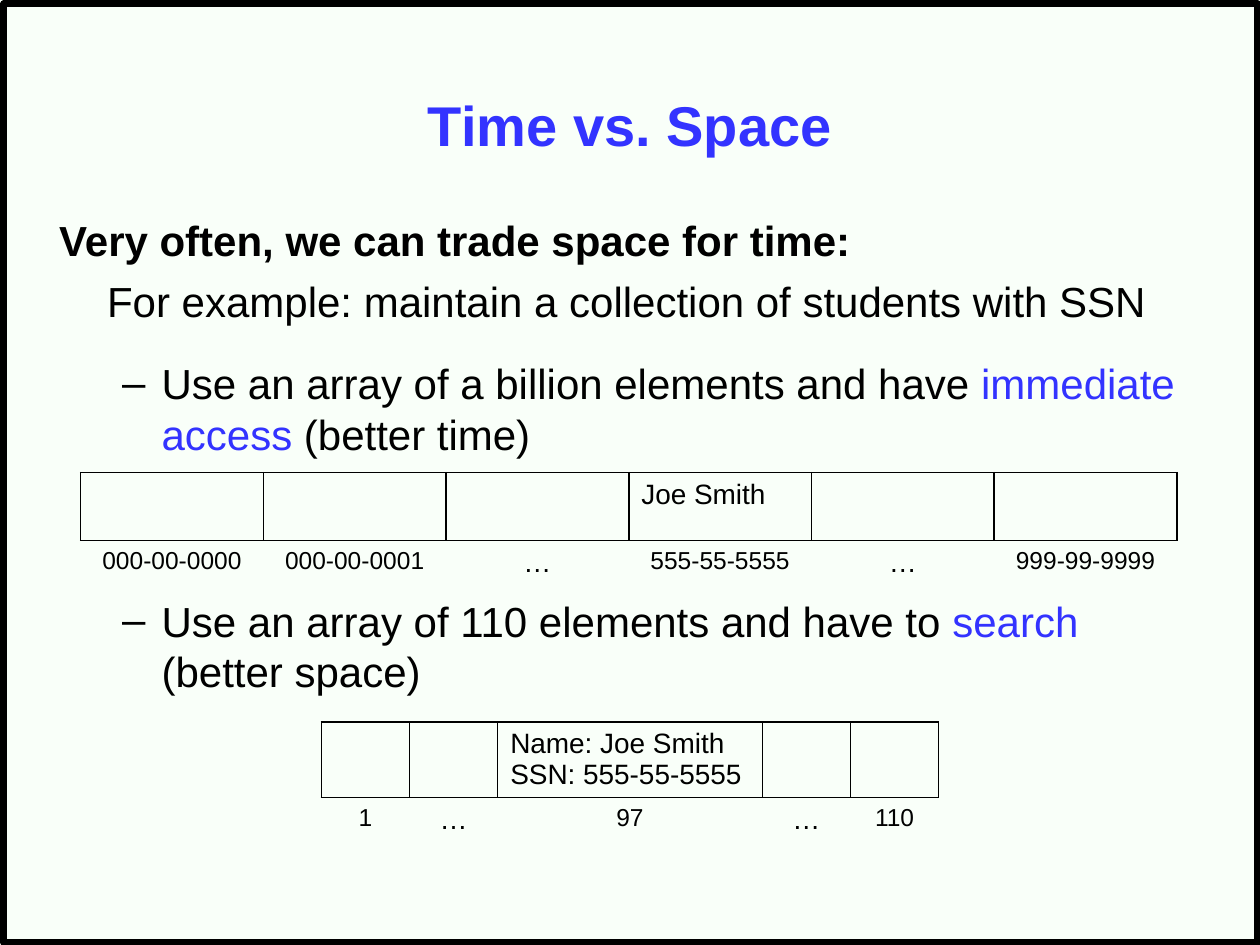
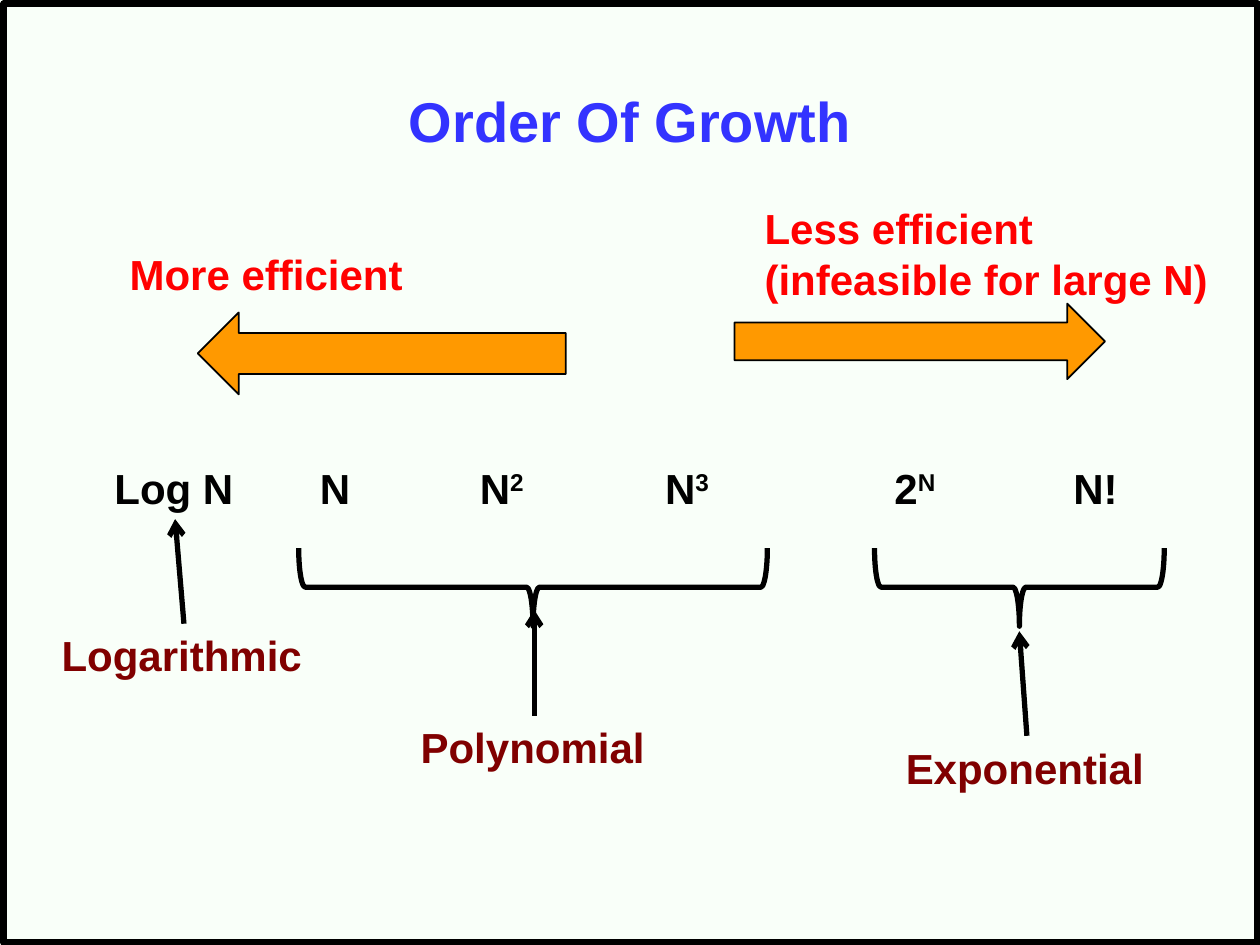
"""Build two slides on the time and space trade-off and on orders of growth."""
import pptx
import pptx.dml.color
import pptx.enum.shapes
import pptx.enum.text
import pptx.oxml
import pptx.oxml.ns
import pptx.util

Inches = pptx.util.Inches
Pt = pptx.util.Pt
qn = pptx.oxml.ns.qn
SHAPE = pptx.enum.shapes.MSO_SHAPE
ALIGN = pptx.enum.text.PP_ALIGN
AUTO_SIZE = pptx.enum.text.MSO_AUTO_SIZE
NAMESPACE = pptx.oxml.ns.nsdecls("a")

PAPER, BLACK, BLUE = "F9FFF9", "000000", "3333FF"
MAROON, RED, ORANGE = "800000", "FF0000", "FF9900"


def tint(color_format, color):
    """Set a colour from a hex string."""
    color_format.rgb = pptx.dml.color.RGBColor.from_string(color)


def write(paragraph, pieces, size, bold=False):
    """Add (text, colour) pieces to a paragraph as Arial runs."""
    font_values = {"name": "Arial", "size": Pt(size), "bold": bold}
    for text, color in pieces:
        run = paragraph.add_run()
        run.text = text
        for attribute, value in font_values.items():
            setattr(run.font, attribute, value)
        tint(run.font.color, color)


deck = pptx.Presentation()
deck.slide_width, deck.slide_height = Inches(10), Inches(7.5)
master = deck.slide_master
master.background.fill.solid()
tint(master.background.fill.fore_color, PAPER)

trade_off = deck.slides.add_slide(deck.slide_layouts[1])
growth = deck.slides.add_slide(deck.slide_layouts[5])

frame = trade_off.shapes.add_shape(
    SHAPE.RECTANGLE, Inches(0.03), Inches(0.03), Inches(9.95), Inches(7.45))
frame.shadow.inherit = False
frame.fill.background()
frame.line.width = Pt(3.75)
tint(frame.line.color, BLACK)
frame.element.nvSpPr.cNvPr.set("id", "20")
master.element.cSld.spTree.append(frame.element)

for slide, heading, top, height in (
        (trade_off, "Time vs. Space", 0.36, 1.25),
        (growth, "Order Of Growth", 0.53, 0.84)):
    title = slide.shapes.title
    title.left, title.top = Inches(0.75), Inches(top)
    title.width, title.height = Inches(8.5), Inches(height)
    title.text_frame.auto_size = AUTO_SIZE.NONE
    write(title.text_frame.paragraphs[0], [(heading, BLUE)], 32, True)

argument = trade_off.placeholders[1]
argument.left, argument.top = Inches(0.37), Inches(1.65)
argument.width, argument.height = Inches(9.32), Inches(5.38)
argument.text_frame.auto_size = AUTO_SIZE.NONE
statements = [
    (0, 0, 0, True, [("Very often, we can trade space for time:", BLACK)]),
    (0, 0.38, 6, False,
     [("For example: maintain a collection of students with SSN", BLACK)]),
    (1, None, 18.5, False,
     [("Use an array of a billion elements and have ", BLACK),
      ("immediate access", BLUE), (" (better time)", BLACK)]),
    (1, None, 78, False,
     [("Use an array of 110 elements and have to ", BLACK),
      ("search", BLUE), (" (better space)", BLACK)]),
]
for number, (level, indent, gap, bold, pieces) in enumerate(statements):
    body = argument.text_frame
    statement = body.add_paragraph() if number else body.paragraphs[0]
    statement.level = level
    statement.space_before = Pt(gap)
    write(statement, pieces, 24, bold)
    if indent is not None:
        properties = statement.font and argument.element.findall(".//" + qn("a:pPr"))[-1]
        properties.set("marL", str(Inches(indent)))
        properties.set("indent", "0")
        properties.append(pptx.oxml.parse_xml(f"<a:buNone {NAMESPACE}/>"))

arrays = [
    (0.64, 3.75, 0.54, [1.45] * 6,
     ["", "", "", "Joe Smith", "", ""],
     ["000-00-0000", "000-00-0001", "…", "555-55-5555", "…", "999-99-9999"]),
    (2.55, 5.73, 0.6, [0.7, 0.7, 2.1, 0.7, 0.7],
     ["", "", "Name: Joe Smith\nSSN: 555-55-5555", "", ""],
     ["1", "…", "97", "…", "110"]),
]
for left, top, height, widths, elements, indexes in arrays:
    holder = trade_off.shapes.add_table(
        2, len(widths), Inches(left), Inches(top),
        Inches(sum(widths)), Inches(height + 0.41))
    array = holder.table
    array.first_row = array.horz_banding = False
    array.rows[0].height, array.rows[1].height = Inches(height), Inches(0.41)
    for column, width in enumerate(widths):
        array.columns[column].width = Inches(width)
        for number, line in enumerate(elements[column].splitlines()):
            content = array.cell(0, column).text_frame
            entry = content.add_paragraph() if number else content.paragraphs[0]
            write(entry, [(line, BLACK)], 16)
        index = array.cell(1, column).text_frame.paragraphs[0]
        index.alignment = ALIGN.CENTER
        write(index, [(indexes[column], BLACK)],
              16 if indexes[column] == "…" else 14)
    for cell in array.iter_cells():
        cell.fill.background()
    for row, ruled_sides in zip(holder.element.iter(qn("a:tr")), ("LRTB", "T")):
        for cell_xml in row.iter(qn("a:tc")):
            for position, side in enumerate("LRTB"):
                stroke = (f'<a:solidFill><a:srgbClr val="{BLACK}"/></a:solidFill>'
                          if side in ruled_sides else "<a:noFill/>")
                cell_xml.get_or_add_tcPr().insert(position, pptx.oxml.parse_xml(
                    f'<a:ln{side} {NAMESPACE} w="12700">{stroke}</a:ln{side}>'))

captions = [
    ("Log N", "", 0.81, 3.62, 1.15, 0.5, BLACK),
    ("N", "", 2.44, 3.62, 0.44, 0.5, BLACK),
    ("N", "2", 3.71, 3.62, 0.57, 0.5, BLACK),
    ("N", "3", 5.18, 3.62, 0.57, 0.5, BLACK),
    ("2", "N", 7, 3.62, 0.55, 0.5, BLACK),
    ("N!", "", 8.42, 3.62, 0.56, 0.5, BLACK),
    ("Logarithmic", "", 0.39, 4.95, 2.13, 0.51, MAROON),
    ("Polynomial", "", 3.24, 5.68, 2, 0.51, MAROON),
    ("Exponential", "", 7.09, 5.84, 2.11, 0.51, MAROON),
    ("More efficient", "", 0.93, 1.92, 2.39, 0.5, RED),
    ("Less efficient (infeasible for large N)", "", 5.97, 1.56, 3.87, 0.91, RED),
]
for text, exponent, left, top, width, height, color in captions:
    caption = growth.shapes.add_textbox(
        Inches(left), Inches(top), Inches(width), Inches(height))
    caption.text_frame.word_wrap = color == RED
    pieces = [(text, color)] + ([(exponent, color)] if exponent else [])
    write(caption.text_frame.paragraphs[0], pieces, 24, True)
    if exponent:
        caption.element.findall(".//" + qn("a:rPr"))[-1].set("baseline", "30000")
    if color == BLACK:
        caption.fill.solid()
        tint(caption.fill.fore_color, PAPER)

for start_x, start_y, end_x, end_y in (
        (1.46, 4.95, 1.39, 4.12),
        (4.24, 5.68, 4.24, 4.84),
        (8.15, 5.84, 8.09, 5.01)):
    pointer = growth.shapes.add_connector(
        pptx.enum.shapes.MSO_CONNECTOR.STRAIGHT, Inches(start_x),
        Inches(start_y), Inches(end_x), Inches(end_y))
    pointer.line.width = Pt(3)
    tint(pointer.line.color, BLACK)
    pointer.element.spPr.find(qn("a:ln")).append(
        pptx.oxml.parse_xml(f'<a:tailEnd {NAMESPACE} type="arrow"/>'))
    pointer.element.spPr.append(pptx.oxml.parse_xml(f"<a:effectLst {NAMESPACE}/>"))

for preset, left, top, width, height, weight in (
        (SHAPE.RIGHT_BRACE, 3.92, 2.8, 0.62, 3.72, 3),
        (SHAPE.RIGHT_BRACE, 7.78, 3.51, 0.62, 2.3, 3),
        (SHAPE.LEFT_ARROW, 1.57, 2.48, 2.92, 0.65, 1),
        (SHAPE.RIGHT_ARROW, 5.83, 2.41, 2.94, 0.6, 1)):
    marker = growth.shapes.add_shape(
        preset, Inches(left), Inches(top), Inches(width), Inches(height))
    marker.shadow.inherit = False
    marker.line.width = Pt(weight)
    tint(marker.line.color, BLACK)
    if preset == SHAPE.RIGHT_BRACE:
        marker.rotation = 90
        marker.fill.background()
    else:
        marker.fill.solid()
        tint(marker.fill.fore_color, ORANGE)

deck.save("out.pptx")
